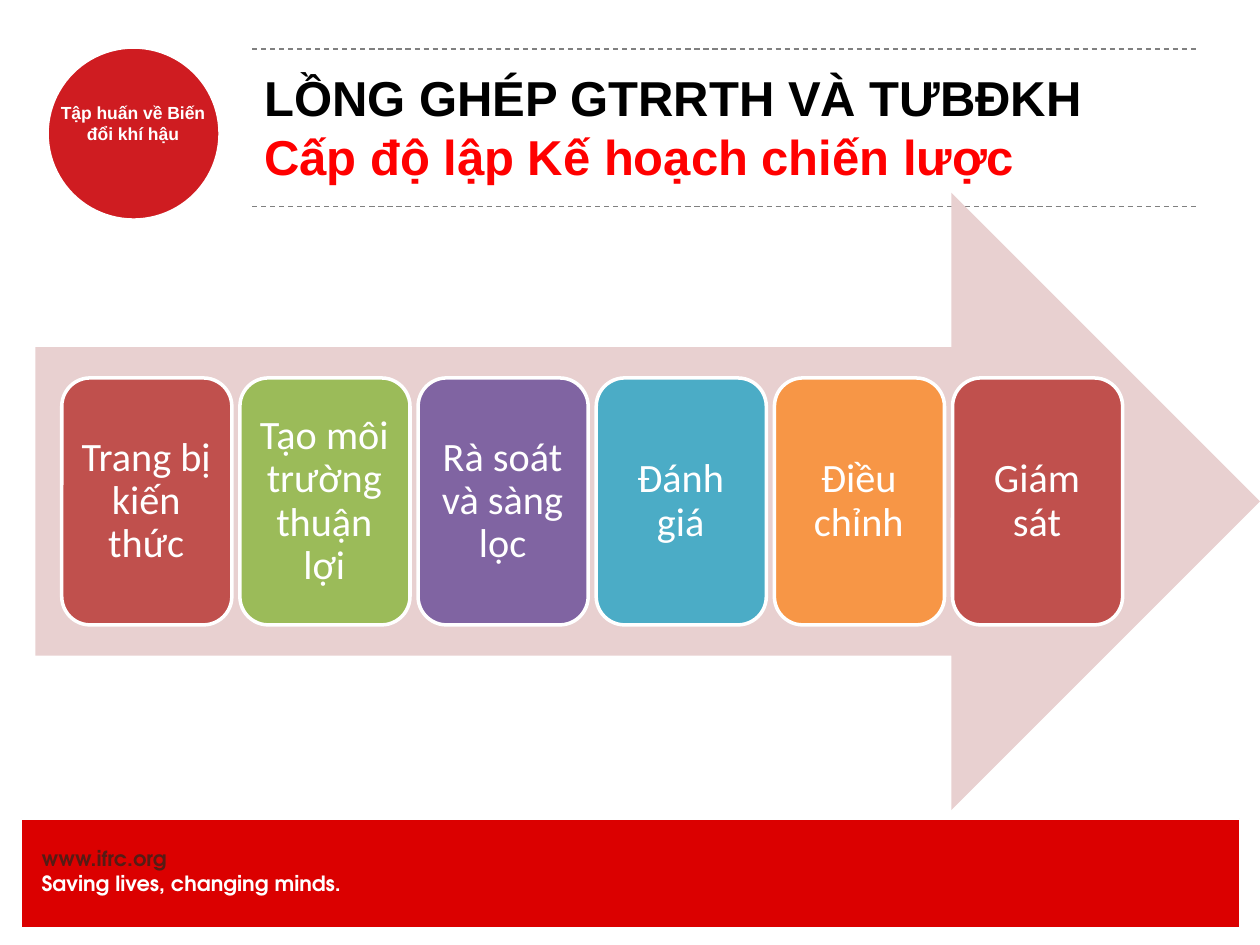
from pptx import Presentation
from pptx.dml.color import RGBColor
from pptx.enum.dml import MSO_LINE
from pptx.enum.shapes import MSO_CONNECTOR, MSO_SHAPE
from pptx.enum.text import MSO_ANCHOR, PP_ALIGN
from pptx.oxml.ns import qn
from pptx.util import Inches, Pt
from lxml import etree


def rgb(code):
    return RGBColor.from_string(code)


def add_box(kind, left, top, width, height, fill=None, line=None, weight=1):
    """Add a plain shape, or a text box when kind is None, with no margins."""
    area = [Inches(n) for n in (left, top, width, height)]
    if kind is None:
        box = slide.shapes.add_textbox(*area)
    else:
        box = slide.shapes.add_shape(kind, *area)
        box.shadow.inherit = False
        box.fill.solid()
        box.fill.fore_color.rgb = rgb(fill)
        if line:
            box.line.color.rgb = rgb(line)
            box.line.width = Pt(weight)
        else:
            box.line.fill.background()
    frame = box.text_frame
    frame.word_wrap = True
    frame.margin_left = frame.margin_right = 0
    frame.margin_top = frame.margin_bottom = 0
    return box


prs = Presentation()
prs.slide_width, prs.slide_height = Inches(10), Inches(7.5)
slide = prs.slides.add_slide(prs.slide_layouts[6])

# Footer band
add_box(MSO_SHAPE.RECTANGLE, 0.17, 6.5, 9.67, 0.86, "DB0000", "FFFFFF", 0.75)
frame = add_box(None, 0.33, 6.71, 3.42, 0.4).text_frame
frame.text = "www.ifrc.org\nSaving lives, changing minds."
for para, color in zip(frame.paragraphs, ("551C15", "FFFFFF")):
    font = para.font
    font.name, font.size, font.bold = "TeX Gyre Adventor", Pt(12), True
    font.color.rgb = rgb(color)

# Course badge
add_box(MSO_SHAPE.OVAL, 0.37, 0.37, 1.38, 1.38, "CF1C21", "FFFFFF", 2.5)
para = add_box(None, 0.43, 0.81, 1.25, 0.5).text_frame.paragraphs[0]
para.text = "Tập huấn về Biến đổi khí hậu"
para.alignment = PP_ALIGN.CENTER
para.font.name, para.font.size, para.font.bold = "Arial", Pt(10), True
para.font.color.rgb = rgb("FFFFFF")

# Dashed rules around the title
for y in (0.39, 1.64):
    rule = slide.shapes.add_connector(
        MSO_CONNECTOR.STRAIGHT, Inches(2), Inches(y), Inches(9.5), Inches(y))
    rule.line.color.rgb = rgb("808080")
    rule.line.width = Pt(0.75)
    rule.line.dash_style = MSO_LINE.DASH
    etree.SubElement(rule._element.spPr, qn("a:effectLst"))

# Title
frame = add_box(None, 2, 0.38, 7.8, 1.25).text_frame
frame.margin_left = frame.margin_right = Inches(0.1)
frame.vertical_anchor = MSO_ANCHOR.MIDDLE
para = frame.paragraphs[0]
para.font.name, para.font.size, para.font.bold = "Arial", Pt(28), True
run = para.add_run()
run.text = "LỒNG GHÉP GTRRTH VÀ TƯBĐKH"
run.font.color.rgb = rgb("000000")
para.add_line_break()
run = para.add_run()
run.text = "Cấp độ lập Kế hoạch chiến lược"
run.font.color.rgb = rgb("FF0000")

# Arrow behind the steps
add_box(MSO_SHAPE.RIGHT_ARROW, 0.28, 1.53, 9.72, 4.9, "E8D0D0")

# Steps, evenly spaced
steps = [
    ("Trang bị kiến thức", "C0504D"),
    ("Tạo môi trường thuận lợi", "9BBB59"),
    ("Rà soát và sàng lọc", "8064A2"),
    ("Đánh giá", "4BACC6"),
    ("Điều chỉnh", "F79646"),
    ("Giám sát", "C0504D"),
]
first, last = 0.49, 7.56
pitch = (last - first) / (len(steps) - 1)
for i, (text, fill) in enumerate(steps):
    step = add_box(MSO_SHAPE.ROUNDED_RECTANGLE, first + i * pitch, 3,
                   1.35, 1.96, fill, "FFFFFF", 2)
    frame = step.text_frame
    frame.margin_left, frame.margin_right = Inches(0.09), Inches(0.1)
    frame.vertical_anchor = MSO_ANCHOR.MIDDLE
    para = frame.paragraphs[0]
    para.text = text
    para.alignment = PP_ALIGN.CENTER
    para.line_spacing = 0.9
    para.font.name, para.font.size = "Calibri", Pt(23)
    para.font.color.rgb = rgb("FFFFFF")

prs.save("out.pptx")
